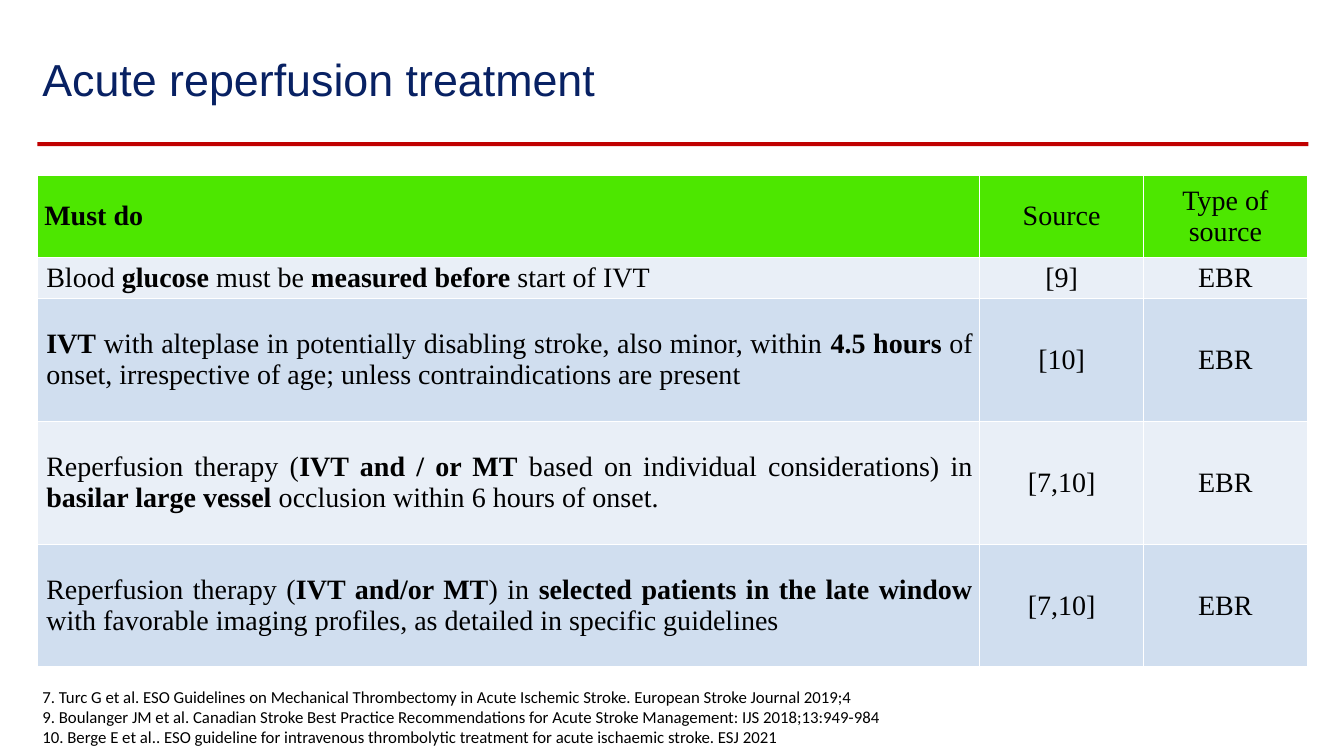
from lxml import etree
from pptx import Presentation
from pptx import util as u
from pptx.dml.color import RGBColor
from pptx.enum import shapes, text
from pptx.oxml import ns

HUES = {
    "navy": "082163",
    "red": "C00000",
    "green": "4DE700",
    "pale": "E9EFF7",
    "blue": "D0DEEF",
    "black": "000000",
    "white": "FFFFFF",
}
LEFT = 26.64
COLS = [673.2, 117, 117]
ROWS = [58.4, 29.4, 87.8, 87.8, 87.8]
HEADS = ["*Must do*", "Source", "Type of source"]
ITEMS = [
    ("Blood *glucose* must be *measured before* start of IVT", "[9]"),
    ("*IVT* with alteplase in potentially disabling stroke, also minor, within *4.5 hours* "
     "of onset, irrespective of age; unless contraindications are present", "[10]"),
    ("Reperfusion therapy (*IVT and / or MT* based on individual considerations) in "
     "*basilar large vessel* occlusion within 6 hours of onset.", "[7,10]"),
    ("Reperfusion therapy (*IVT and/or MT*) in *selected patients in the late window* "
     "with favorable imaging profiles, as detailed in specific guidelines", "[7,10]"),
]
REFS = [
    "7. Turc G et al. ESO Guidelines on Mechanical Thrombectomy in Acute Ischemic Stroke. "
    "European Stroke Journal 2019;4",
    "9. Boulanger JM et al. Canadian Stroke Best Practice Recommendations for Acute Stroke "
    "Management: IJS 2018;13:949-984",
    "10. Berge E et al.. ESO guideline for intravenous thrombolytic treatment for acute "
    "ischaemic stroke. ESJ 2021",
]


class Deck:
    def __init__(self, slide):
        self.slide = slide
        self.shapes = slide.shapes

    def hue(self, name):
        return RGBColor.from_string(HUES[name])

    def style(self, font, face, size, hue):
        font.name = face
        font.size = u.Pt(size)
        font.color.rgb = self.hue(hue)

    def inset(self, frame):
        frame.margin_left = frame.margin_right = u.Pt(3.6)
        frame.margin_top = frame.margin_bottom = u.Pt(3.6)

    def title(self, words, box):
        shape = self.shapes.title
        shape.left, shape.top, shape.width, shape.height = map(u.Pt, box)
        frame = shape.text_frame
        frame.text = words
        self.inset(frame)
        frame.auto_size = text.MSO_AUTO_SIZE.NONE
        frame.vertical_anchor = text.MSO_ANCHOR.MIDDLE
        para = frame.paragraphs[0]
        para.alignment = text.PP_ALIGN.LEFT
        para.line_spacing = 0.9
        self.style(para.runs[0].font, "Arial", 32, "navy")

    def bar(self, box, hue):
        shape = self.shapes.add_shape(shapes.MSO_SHAPE.RECTANGLE, *map(u.Pt, box))
        shape.shadow.inherit = False
        shape.fill.solid()
        shape.fill.fore_color.rgb = self.hue(hue)
        shape.line.fill.background()

    def notes(self, lines, box):
        frame = self.shapes.add_textbox(*map(u.Pt, box)).text_frame
        frame.text = "\n".join(lines)
        frame.word_wrap = False
        frame.auto_size = text.MSO_AUTO_SIZE.SHAPE_TO_FIT_TEXT
        self.inset(frame)
        for para in frame.paragraphs:
            self.style(para.runs[0].font, "Calibri", 12, "black")

    def edge(self, cell):
        props = cell._tc.get_or_add_tcPr()
        for side in ("a:lnL", "a:lnR", "a:lnT", "a:lnB"):
            line = etree.SubElement(props, ns.qn(side), w=str(u.Pt(1)))
            fill = etree.SubElement(line, ns.qn("a:solidFill"))
            etree.SubElement(fill, ns.qn("a:srgbClr"), val=HUES["white"])

    def cell(self, cell, words, hue, align, indent):
        self.edge(cell)
        cell.fill.solid()
        cell.fill.fore_color.rgb = self.hue(hue)
        cell.vertical_anchor = text.MSO_ANCHOR.MIDDLE
        cell.margin_left = cell.margin_right = u.Pt(5)
        cell.margin_top = cell.margin_bottom = 0
        para = cell.text_frame.paragraphs[0]
        para.alignment = align
        if indent:
            para._p.get_or_add_pPr().set("marL", str(u.Pt(indent)))
        for i, part in enumerate(words.split("*")):
            if part:
                run = para.add_run()
                run.text = part
                self.style(run.font, "Times New Roman", 20, "black")
                run.font.bold = i % 2 == 1

    def table(self, data, left, top):
        box = map(u.Pt, (left, top, sum(COLS), sum(ROWS)))
        grid = self.shapes.add_table(len(ROWS), len(COLS), *box).table
        for col, width in zip(grid.columns, COLS):
            col.width = u.Pt(width)
        for row, high in zip(grid.rows, ROWS):
            row.height = u.Pt(high)
        for r, row in enumerate(data):
            hue = "green" if r == 0 else ("blue", "pale")[r % 2]
            for c, words in enumerate(row):
                align = text.PP_ALIGN.CENTER if c else text.PP_ALIGN.JUSTIFY
                indent = 1.44 if r and c == 0 else 0
                self.cell(grid.cell(r, c), words, hue, align, indent)


def main():
    show = Presentation()
    show.slide_width, show.slide_height = u.Pt(960), u.Pt(540)
    deck = Deck(show.slides.add_slide(show.slide_layouts[5]))
    deck.bar((LEFT, 101.5, 908, 2.9), "red")
    deck.title("Acute reperfusion treatment", (LEFT, 28.8, 773.3, 59))
    deck.notes(REFS, (LEFT, 486.7, 607.7, 49.7))
    deck.table([HEADS] + [(*item, "EBR") for item in ITEMS], LEFT, 125.3)
    show.save("out.pptx")


if __name__ == "__main__":
    main()
